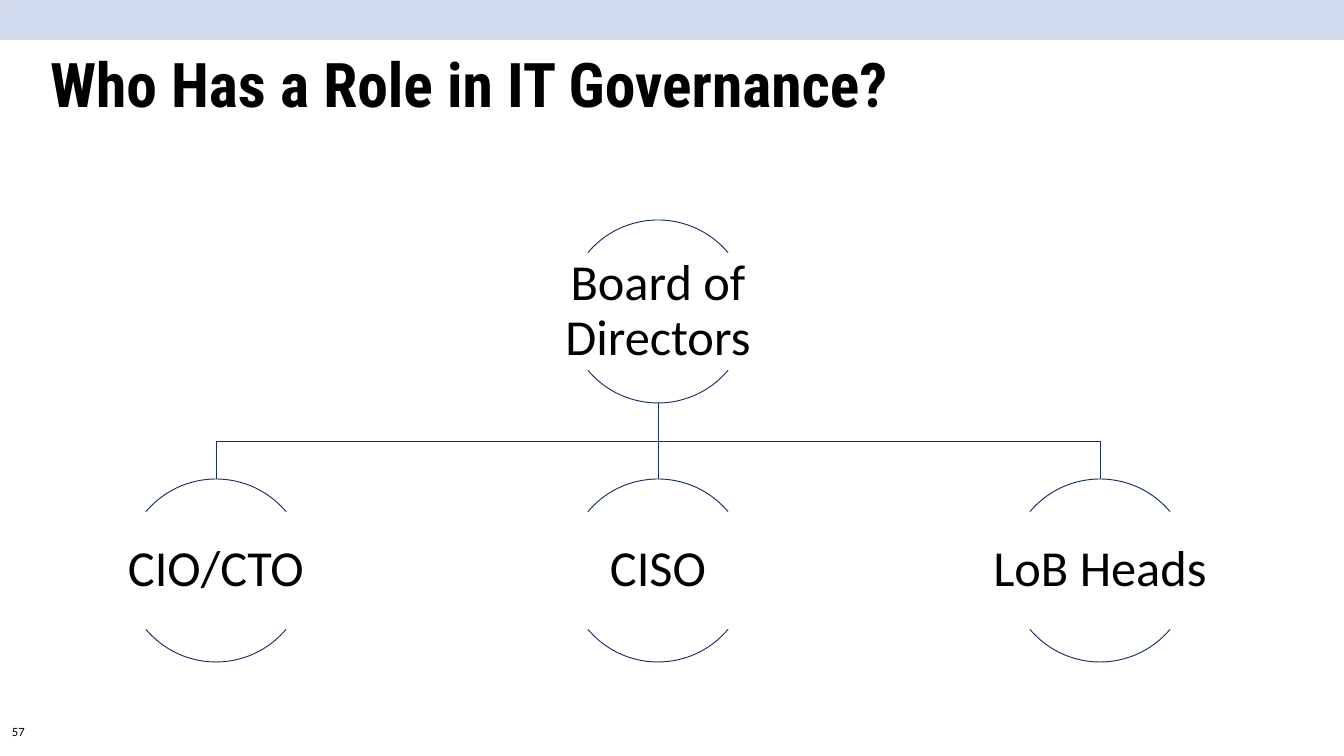
from dataclasses import dataclass

from lxml.etree import SubElement
from pptx import Presentation
from pptx.dml.color import RGBColor as RGB
from pptx.enum.shapes import MSO_CONNECTOR as CONN, MSO_SHAPE as SHAPE
from pptx.enum.text import MSO_ANCHOR as ANCHOR, MSO_AUTO_SIZE as AUTO, PP_ALIGN as ALIGN
from pptx.oxml.ns import qn
from pptx.util import Pt

TITLE = "Who Has a Role in IT Governance?"
BOARD = "Board of Directors"
REPORTS = ["CIO/CTO", "CISO", "LoB Heads"]
PAGE = "57"


@dataclass(frozen=True)
class Theme:
    text: RGB = RGB.from_string("000000")
    band: RGB = RGB.from_string("D1DBF0")
    band_edge: RGB = RGB.from_string("D9DEEA")
    line: RGB = RGB.from_string("172E62")
    heading_font: str = "Roboto Condensed"
    body_font: str = "Calibri"
    title_size: float = 66
    node_size: float = 54
    page_size: float = 13.5


T = Theme()
W, H = 1344, 756
CENTER, STEP = 658, 442
BOARD_TOP, REPORT_TOP, CIRCLE = 220, 479, 183
LABEL_W, LABEL_H = 366, 117
ARCS = [(132, 192), (24, 84)]


def px(n):
    return round(n * 914400 / 67.2)


def box(*lengths):
    return [px(n) for n in lengths]


def stroke(shape, color=T.line):
    shape.line.color.rgb = color
    shape.line.width = Pt(1)


def write(shape, text, size, font, spacing, align=ALIGN.LEFT, anchor=ANCHOR.TOP,
          inset=(7, 3), bold=False):
    tf = shape.text_frame
    tf.word_wrap = True
    tf.auto_size = AUTO.NONE
    tf.vertical_anchor = anchor
    tf.margin_left = tf.margin_right = px(inset[0])
    tf.margin_top = tf.margin_bottom = px(inset[1])
    p = tf.paragraphs[0]
    p.alignment = align
    p.line_spacing = spacing
    r = p.add_run()
    r.text = text
    r.font.size = Pt(size)
    r.font.name = font
    r.font.bold = bold
    r.font.color.rgb = T.text


def add_node(s, text, cx, top):
    for start, end in ARCS:
        arc = s.shapes.add_shape(SHAPE.ARC, *box(cx - CIRCLE / 2, top, CIRCLE, CIRCLE))
        arc.adjustments[0] = start
        arc.adjustments[1] = end
        arc.fill.background()
        arc.shadow.inherit = False
        stroke(arc)
    label = s.shapes.add_textbox(
        *box(cx - LABEL_W / 2, top + (CIRCLE - LABEL_H) / 2, LABEL_W, LABEL_H))
    write(label, text, T.node_size, T.body_font, 0.9, ALIGN.CENTER, ANCHOR.MIDDLE, (3, 3))


def add_branch(s, cx):
    start, end = BOARD_TOP + CIRCLE, REPORT_TOP
    if cx == CENTER:
        branch = s.shapes.add_connector(CONN.STRAIGHT, *box(cx, start, cx, end))
        SubElement(branch.element.spPr, qn("a:effectLst"))
    else:
        middle = (start + end) / 2
        fb = s.shapes.build_freeform(*box(CENTER, start))
        corners = [(CENTER, middle), (cx, middle), (cx, end)]
        fb.add_line_segments([box(*corner) for corner in corners], close=False)
        branch = fb.convert_to_shape()
        branch.fill.background()
        branch.shadow.inherit = False
    stroke(branch)


def main():
    prs = Presentation()
    prs.slide_width, prs.slide_height = box(W, H)
    s = prs.slides.add_slide(prs.slide_layouts[5])

    title = s.shapes.title
    title.left, title.top, title.width, title.height = box(43, 15, 1159, 146)
    write(title, TITLE, T.title_size, T.heading_font, 0.9, anchor=ANCHOR.MIDDLE, bold=True)

    band = s.shapes.add_shape(SHAPE.RECTANGLE, *box(0, 0, W, 40))
    band.fill.solid()
    band.fill.fore_color.rgb = T.band
    band.shadow.inherit = False
    stroke(band, T.band_edge)
    title.element.addprevious(band.element)

    columns = [CENTER + (i - 1) * STEP for i in range(len(REPORTS))]
    for cx in columns:
        add_branch(s, cx)
    add_node(s, BOARD, CENTER, BOARD_TOP)
    for text, cx in zip(REPORTS, columns):
        add_node(s, text, cx, REPORT_TOP)

    page = s.shapes.add_textbox(*box(2, 722, 110, 44))
    write(page, PAGE, T.page_size, T.body_font, 0.8, inset=(10, 5))
    prs.save("out.pptx")


if __name__ == "__main__":
    main()
